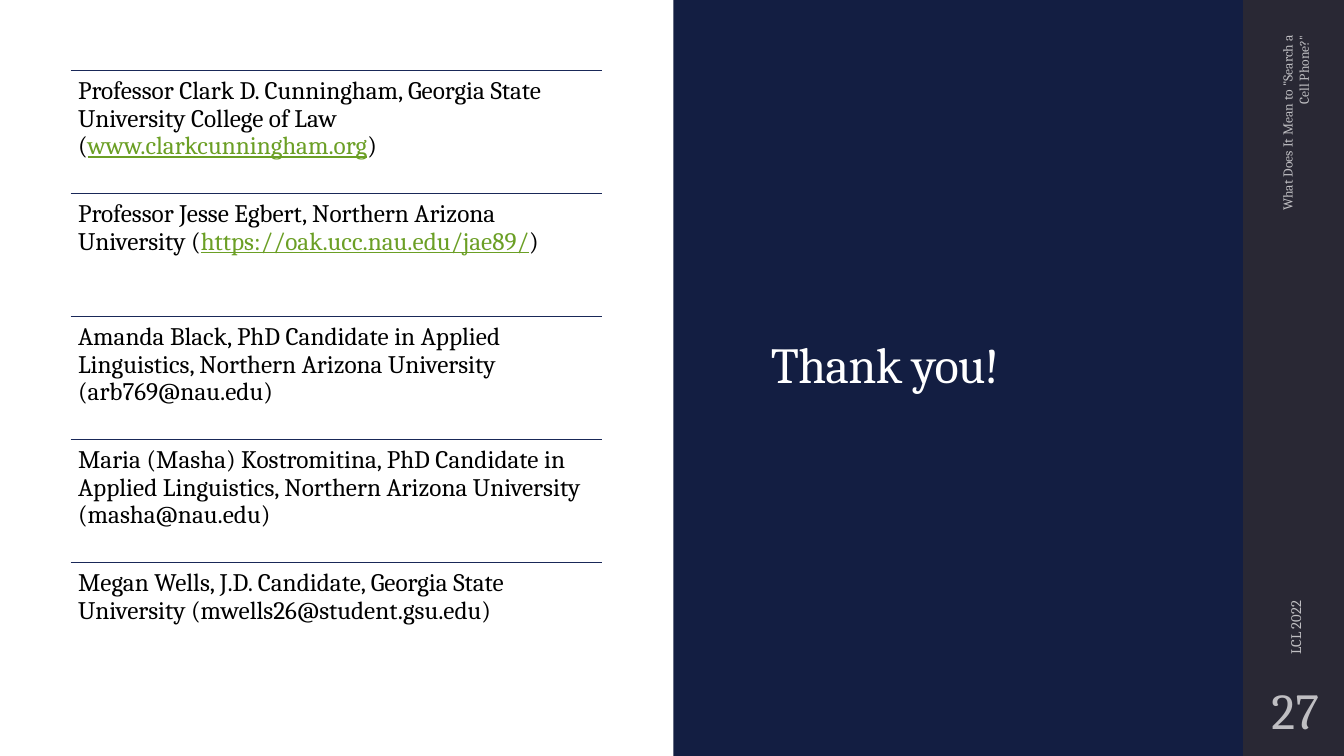
from lxml import etree
from pptx import Presentation
from pptx.dml.color import RGBColor
from pptx.enum.shapes import MSO_CONNECTOR, MSO_SHAPE
from pptx.enum.text import MSO_ANCHOR, PP_ALIGN
from pptx.oxml.ns import qn
from pptx.util import Pt

STRAIGHT = MSO_CONNECTOR.STRAIGHT
RECTANGLE = MSO_SHAPE.RECTANGLE
TOP, MIDDLE = MSO_ANCHOR.TOP, MSO_ANCHOR.MIDDLE
LEFT, CENTER, RIGHT = PP_ALIGN.LEFT, PP_ALIGN.CENTER, PP_ALIGN.RIGHT

WHITE = RGBColor(0xFF, 0xFF, 0xFF)
BLACK = RGBColor(0x00, 0x00, 0x00)
NAVY = RGBColor(0x13, 0x1E, 0x42)
RULE_BLUE = RGBColor(0x19, 0x28, 0x58)
CHARCOAL = RGBColor(0x29, 0x28, 0x34)
LINK_GREEN = RGBColor(0x6B, 0x9F, 0x25)

FONT = "Cambria"
SLIDE_WIDTH, SLIDE_HEIGHT = 960, 540

# Each entry: text before the web address, the address, text after it
CONTACTS = [
    ("Professor Clark D. Cunningham, Georgia State University College of Law (",
     "www.clarkcunningham.org", ")"),
    ("Professor Jesse Egbert, Northern Arizona University (",
     "https://oak.ucc.nau.edu/jae89/", ")"),
    ("Amanda Black, PhD Candidate in Applied Linguistics, "
     "Northern Arizona University (arb769@nau.edu)", "", ""),
    ("Maria (Masha) Kostromitina, PhD Candidate in Applied Linguistics, "
     "Northern Arizona University (masha@nau.edu)", "", ""),
    ("Megan Wells, J.D. Candidate, Georgia State University "
     "(mwells26@student.gsu.edu)", "", ""),
]


def add_panel(slide, box, color):
    panel = slide.shapes.add_shape(RECTANGLE, *map(Pt, box))
    panel.shadow.inherit = False
    panel.fill.solid()
    panel.fill.fore_color.rgb = color
    panel.line.fill.background()


def add_paragraph_box(slide, box, anchor=MIDDLE, align=LEFT, spacing=1.0,
                      insets=(7.2, 3.6), rotation=0):
    """Add a wrapping text box and return its empty paragraph."""
    holder = slide.shapes.add_textbox(*map(Pt, box))
    holder.rotation = rotation
    frame = holder.text_frame
    frame.word_wrap = True
    frame.vertical_anchor = anchor
    frame.margin_left = frame.margin_right = Pt(insets[0])
    frame.margin_top = frame.margin_bottom = Pt(insets[1])
    paragraph = frame.paragraphs[0]
    paragraph.alignment = align
    paragraph.line_spacing = spacing
    return paragraph


def add_run(paragraph, text, size, color):
    run = paragraph.add_run()
    run.text = text
    run.font.name = FONT
    run.font.size = Pt(size)
    run.font.color.rgb = color
    return run


def add_faded_run(paragraph, text, size):
    """Add white text at 70% opacity."""
    run = add_run(paragraph, text, size, WHITE)
    color = run.font._element.find(".//" + qn("a:srgbClr"))
    etree.SubElement(color, qn("a:alpha")).set("val", "70000")


def add_contact_list(slide, box):
    left, top, width, height = box
    row_height = height / len(CONTACTS)
    for index, (intro, address, ending) in enumerate(CONTACTS):
        row_top = top + index * row_height
        rule = slide.shapes.add_connector(
            STRAIGHT, Pt(left), Pt(row_top), Pt(left + width), Pt(row_top))
        rule.line.color.rgb = RULE_BLUE
        rule.line.width = Pt(1.1)
        etree.SubElement(rule._element.spPr, qn("a:effectLst"))

        contact = add_paragraph_box(slide, (left, row_top, width, row_height),
                                    anchor=TOP, spacing=0.9, insets=(5.4, 5.4))
        add_run(contact, intro, 18, BLACK)
        if address:
            add_run(contact, address, 18, LINK_GREEN).font.underline = True
            add_run(contact, ending, 18, BLACK)


def add_title_panel(slide, box):
    left, top, width, height = box
    add_panel(slide, box, NAVY)
    title = add_paragraph_box(
        slide, (left + 62.6, top + 50.4, 311.8, 423.4), spacing=0.9)
    closing = add_run(title, "Thank you!", 36, WHITE)
    closing.font._element.set("spc", "-50")


def add_sidebar(slide, box):
    left, top, width, height = box
    add_panel(slide, box, CHARCOAL)
    talk = add_paragraph_box(slide, (left - 37.7, top + 78.5, 149.8, 28.8),
                             align=RIGHT, rotation=270)
    add_faded_run(talk, 'What Does It Mean to "Search a Cell Phone?"', 9.7)
    event = add_paragraph_box(slide, (left - 103.9, top + 319, 282.2, 28.8),
                              rotation=270)
    add_faded_run(event, "LCL 2022", 10.5)
    number = add_paragraph_box(slide, (left + 1.2, top + 486, width, 46.8),
                               align=CENTER, spacing=0.9, insets=(3.6, 3.6))
    add_faded_run(number, "27", 36)


def main():
    deck = Presentation()
    deck.slide_width, deck.slide_height = Pt(SLIDE_WIDTH), Pt(SLIDE_HEIGHT)
    slide = deck.slides.add_slide(deck.slide_layouts[6])
    slide.background.fill.solid()
    slide.background.fill.fore_color.rgb = WHITE
    add_title_panel(slide, (481, 0, 408, SLIDE_HEIGHT))
    add_sidebar(slide, (888, 0, 72, SLIDE_HEIGHT))
    add_contact_list(slide, (50.4, 50.4, 379.4, 439.2))
    deck.save("out.pptx")


if __name__ == "__main__":
    main()
